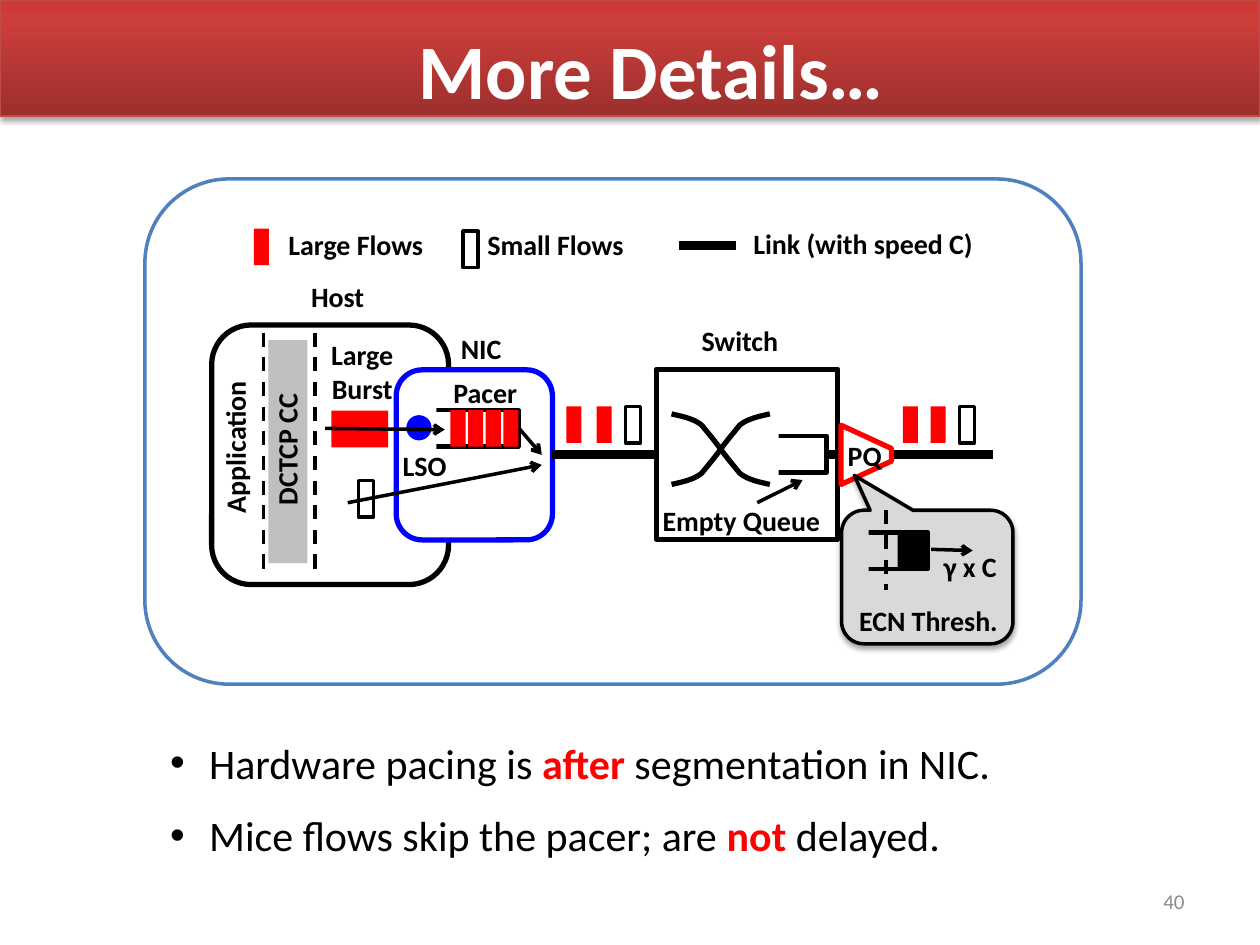
import copy

import pptx
import pptx.dml.color
import pptx.enum.dml
import pptx.enum.shapes
import pptx.enum.text
import pptx.oxml.ns
import pptx.oxml.xmlchemy
import pptx.util

SHAPE = pptx.enum.shapes.MSO_SHAPE
ALIGN = pptx.enum.text.PP_ALIGN
ANCHOR = pptx.enum.text.MSO_ANCHOR
AUTO = pptx.enum.text.MSO_AUTO_SIZE
qn = pptx.oxml.ns.qn

BLACK, WHITE, RED, BLUE, GREY = "000000", "FFFFFF", "FF0000", "0000FF", "D9D9D9"
COLUMNS, ROWS = 100, 75
PACKET_W, PACKET_H = 1.2, 2.9


def rgb(hex_color):
    return pptx.dml.color.RGBColor.from_string(hex_color)


def write(paragraph, text, size=16, color=BLACK, bold=True):
    run = paragraph.add_run()
    run.text = text
    run.font.name = "Calibri"
    run.font.size = pptx.util.Pt(size)
    run.font.bold = bold
    run.font.color.rgb = rgb(color)


def add_child(parent, tag, **attributes):
    child = parent.makeelement(qn(tag), attributes)
    parent.append(child)
    return child


def cubic(p0, p1, p2, p3, steps=10):
    """Points along a Bezier curve, without its first point."""
    for i in range(1, steps + 1):
        t = i / steps
        weights = ((1 - t) ** 3, 3 * t * (1 - t) ** 2, 3 * t * t * (1 - t), t ** 3)
        yield tuple(sum(w * p[axis] for w, p in zip(weights, (p0, p1, p2, p3)))
                    for axis in (0, 1))


class Diagram:
    """Draws on one slide, with lengths in columns and rows of its grid."""

    def __init__(self, deck):
        self.slide = deck.slides.add_slide(deck.slide_layouts[1])
        self.shapes = self.slide.shapes
        self.column = deck.slide_width / COLUMNS
        self.row = deck.slide_height / ROWS

    def place(self, *lengths):
        """Turn alternating column and row counts into EMU."""
        return [round(n * (self.row if i % 2 else self.column))
                for i, n in enumerate(lengths)]

    def outline(self, line, color, width, dash=False):
        line.color.rgb = rgb(color)
        line.width = pptx.util.Pt(width)
        if dash:
            line.dash_style = pptx.enum.dml.MSO_LINE.DASH

    def box(self, x, y, w, h, fill=None, line=None, width=2, kind=SHAPE.RECTANGLE,
            adjust=(), turn=0):
        shape = self.shapes.add_shape(kind, *self.place(x, y, w, h))
        shape.shadow.inherit = False
        shape.rotation = turn
        for i, value in enumerate(adjust):
            shape.adjustments[i] = value
        if fill:
            shape.fill.solid()
            shape.fill.fore_color.rgb = rgb(fill)
        else:
            shape.fill.background()
        if line:
            self.outline(shape.line, line, width)
        else:
            shape.line.fill.background()
        return shape

    def drop_shadow(self, shape):
        effects = shape._element.spPr.find(qn("a:effectLst"))
        shadow = add_child(effects, "a:outerShdw", blurRad="39370", dist="22860",
                           dir="5400000", rotWithShape="0")
        color = add_child(shadow, "a:srgbClr", val=BLACK)
        add_child(color, "a:alpha", val="35000")

    def gradient(self, shape, stops, angle):
        shape.fill.gradient()
        shape.fill.gradient_angle = angle
        stop_list = shape._element.spPr.find(".//" + qn("a:gsLst"))
        stop_list.insert(1, copy.deepcopy(stop_list[0]))
        for stop, (position, color) in zip(shape.fill.gradient_stops, stops):
            stop.position = position
            stop.color.rgb = rgb(color)

    def line(self, x1, y1, x2, y2, width=2, dash=False, arrow=False):
        connector = self.shapes.add_connector(
            pptx.enum.shapes.MSO_CONNECTOR.STRAIGHT, *self.place(x1, y1, x2, y2))
        self.outline(connector.line, BLACK, width, dash)
        if arrow:
            add_child(connector.line._get_or_add_ln(), "a:tailEnd", type="arrow")
        add_child(connector._element.spPr, "a:effectLst")

    def curve(self, points):
        start, *rest = [self.place(*point) for point in points]
        builder = self.shapes.build_freeform(*start)
        builder.add_line_segments(rest, close=False)
        shape = builder.convert_to_shape()
        shape.shadow.inherit = False
        shape.fill.background()
        self.outline(shape.line, BLACK, 3)

    def label(self, text, x, y, w, h=3.9, align=ALIGN.LEFT, turn=0, **style):
        box = self.shapes.add_textbox(*self.place(x, y, w, h))
        box.rotation = turn
        frame = box.text_frame
        frame.word_wrap = True
        frame.auto_size = AUTO.SHAPE_TO_FIT_TEXT
        for i, words in enumerate(text.split("\n")):
            paragraph = frame.add_paragraph() if i else frame.paragraphs[0]
            paragraph.alignment = align
            write(paragraph, words, **style)
        return box

    def packets(self, y, *lefts, small=False):
        for x in lefts:
            self.box(x, y, PACKET_W, PACKET_H, WHITE if small else RED,
                     BLACK if small else None)

    def queue(self, x, y, w, background=WHITE):
        """A box whose left end is covered so that it looks open."""
        self.box(x, y, w, PACKET_H, line=BLACK, width=2.5)
        self.box(x - 0.6, y - 0.4, 1.7, PACKET_H + 1, background)

    def placeholder(self, index, x, y, w, h, anchor):
        """Move a template placeholder to its place, in front of the rest."""
        holder = self.slide.placeholders[index]
        holder.left, holder.top, holder.width, holder.height = self.place(x, y, w, h)
        holder.text_frame.vertical_anchor = anchor
        holder.text_frame.auto_size = AUTO.NONE
        holder._element.getparent().append(holder._element)
        return holder.text_frame

    def title(self, text, *area):
        paragraph = self.placeholder(0, *area, ANCHOR.MIDDLE).paragraphs[0]
        paragraph.alignment = ALIGN.CENTER
        write(paragraph, text, size=44, color=WHITE)

    def bullets(self, items, *area):
        """Each item is three pieces of text, the middle one emphasised."""
        frame = self.placeholder(1, *area, ANCHOR.TOP)
        indent = pptx.util.Inches(0.31)
        for i, pieces in enumerate(items):
            paragraph = frame.add_paragraph() if i else frame.paragraphs[0]
            paragraph.space_before = pptx.util.Pt(12.5 if i else 0)
            properties = paragraph._p.get_or_add_pPr()
            properties.set("marL", str(indent))
            properties.set("indent", str(-indent))
            add_child(properties, "a:buChar", char="•")
            for piece, strong in zip(pieces, (False, True, False)):
                write(paragraph, piece, size=24, color=RED if strong else BLACK, bold=strong)


def draw_frame(d):
    band = d.box(0, 0, COLUMNS, 9.2, RED, "BF4C48", 0.75)
    d.gradient(band, [(0, "9C2F2D"), (0.8, "CB3E3A"), (1, "CE3B37")], 90)
    d.drop_shadow(band)
    d.box(11.5, 14.2, 74.3, 40.1, WHITE, "4F81BD", 2, SHAPE.ROUNDED_RECTANGLE)


def draw_legend(d):
    d.packets(18.15, 20.15)
    d.label("Large Flows", 21.9, 17.6, 19.2)
    d.packets(18.35, 36.75, small=True)
    d.label("Small Flows", 37.7, 17.6, 19.2)
    d.line(53.9, 19.5, 58.4, 19.5, width=5)
    d.label("Link (with speed C)", 58.8, 17.5, 22.5)


def draw_host(d):
    d.label("Host", 23.7, 21.7, 7.8)
    d.box(21.3, 27, 3.1, 17.7, "BFBFBF")
    d.box(16.8, 25.8, 18.8, 20.6, line=BLACK, width=3, kind=SHAPE.ROUNDED_RECTANGLE)
    for x in (20.9, 25):
        d.line(x, 26.4, x, 45.8, dash=True)
    d.label("Application", 11.7, 32.7, 14.1, turn=270)
    d.label("DCTCP CC", 15.8, 32.1, 14.1, turn=270)
    d.box(31.45, 29.35, 12.4, 13.5, WHITE, BLUE, 3, SHAPE.ROUNDED_RECTANGLE)
    d.label("NIC", 35.6, 25.8, 7.4)
    d.queue(33.55, 32.55, 7.6)
    d.packets(32.55, *[35.75 + 1.4 * i for i in range(4)])
    d.label("Pacer", 35, 29.3, 8.8)
    d.box(26.3, 32.6, 4.5, PACKET_H, RED)
    d.label("Large\nBurst", 24.6, 26.3, 8.3, 6.7, align=ALIGN.CENTER)
    d.label("LSO", 30.3, 35.1, 6.8, align=ALIGN.CENTER)
    d.packets(38.15, 28.45, small=True)
    d.box(32.3, 33, 1.9, 1.9, BLUE, BLUE, 0.75, SHAPE.OVAL)
    for route in ((41.2, 34, 43, 36.1), (27.6, 39.9, 43, 36.9), (25.8, 34, 35.3, 34.1)):
        d.line(*route, arrow=True)


def draw_switch(d):
    d.line(43.8, 36.1, 52.1, 36.1, width=5)
    d.label("Switch", 54.7, 25.2, 10.6)
    d.box(52.1, 29.3, 14.4, 13.5, line=BLACK, width=3)
    d.queue(60.7, 34.6, 4.9)
    d.label("Empty Queue", 51.6, 39.5, 17.8)
    d.line(60.1, 39.9, 63.7, 38.1, arrow=True)
    arm = [(0, 0), (0.5, 0.7), (1.1, 1.4), (1.5, 1.9), (2.1, 2.4), (3, 2.6), (3.9, 2.8)]
    for side in (-1, 1):
        for way in (-1, 1):
            p = [(57.2 + side * x, 35.65 + way * y) for x, y in arm]
            d.curve([p[0], *cubic(*p[:4]), *cubic(*p[3:])])


def draw_phantom_queue(d):
    d.line(65.8, 36.1, 78.8, 36.1, width=5)
    d.box(66.4, 34.1, 4.7, 4, WHITE, RED, 3, SHAPE.TRAPEZOID, [0.462], turn=90)
    d.label("PQ", 66.3, 34.3, 6.4)
    for red_lefts, small_left in (((44.95, 47.35), 49.65), ((71.65, 73.85), 76.15)):
        d.packets(32.25, *red_lefts)
        d.packets(32.25, small_left, small=True)
    callout = d.box(66.8, 40.5, 13.6, 10.6, GREY, BLACK, 2,
                    SHAPE.ROUNDED_RECTANGULAR_CALLOUT, [-0.426, -0.761, 0.167])
    d.drop_shadow(callout)
    d.queue(67.85, 42.25, 5.8, GREY)
    d.box(71.25, 42.35, 2.4, PACKET_H, BLACK)
    d.line(70.3, 40.5, 70.3, 46.8, dash=True)
    d.label("ECN Thresh.", 67.2, 47.4, 15.3)
    d.line(73.9, 43.6, 77.2, 43.7, arrow=True)
    d.label("γ x C", 73.9, 43.1, 15.3)


def main():
    deck = pptx.Presentation()
    deck.slide_width, deck.slide_height = pptx.util.Inches(10), pptx.util.Inches(7.5)
    d = Diagram(deck)
    for draw in (draw_frame, draw_legend, draw_host, draw_switch, draw_phantom_queue):
        draw(d)
    d.title("More Details…", 6.7, -0.8, 90, 12.5)
    d.bullets([("Hardware pacing is ", "after ", "segmentation in NIC."),
               ("Mice flows skip the pacer; are ", "not", " delayed.")],
              12.5, 58, 68.8, 11.1)
    number = d.label("40", 71.7, 69.5, 23.3, 4, align=ALIGN.RIGHT,
                     size=12, color="8C8C8C", bold=False)
    number.text_frame.auto_size = AUTO.NONE
    number.text_frame.vertical_anchor = ANCHOR.MIDDLE
    deck.save("out.pptx")


if __name__ == "__main__":
    main()
